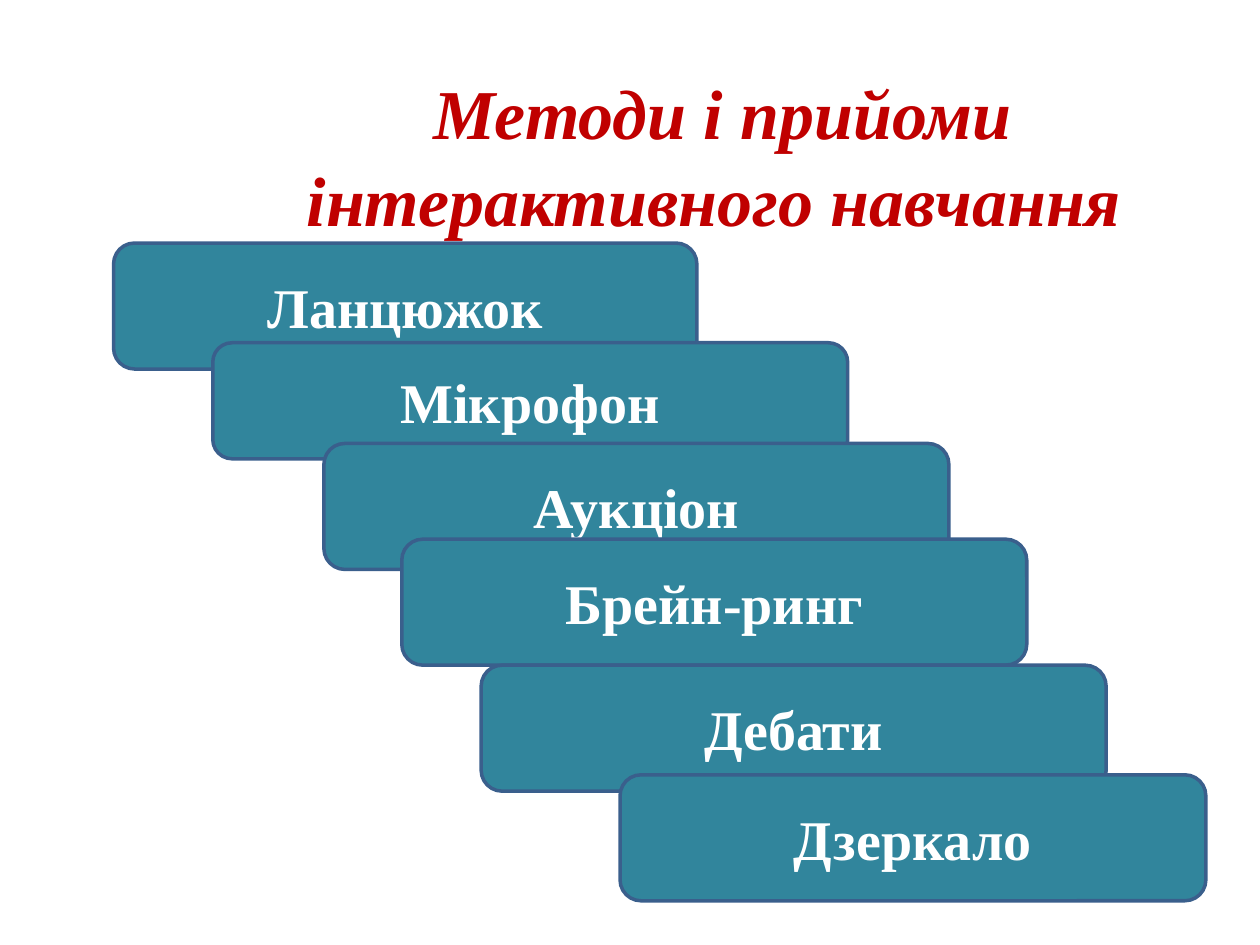
from dataclasses import dataclass

from pptx import Presentation
from pptx.dml.color import RGBColor as Rgb
from pptx.enum.shapes import MSO_SHAPE as Form
from pptx.enum.text import MSO_ANCHOR as Anchor, PP_ALIGN as Align
from pptx.shapes.autoshape import Shape
from pptx.slide import Slide
from pptx.text.text import TextFrame
from pptx.util import Cm, Pt


@dataclass(frozen=True)
class Theme:
    font: str = "Times New Roman"
    red: str = "C00000"
    teal: str = "31859C"
    edge: str = "3A5F8C"
    white: str = "FFFFFF"
    head: int = 40
    label: int = 32
    line: int = 2


@dataclass(frozen=True)
class Step:
    """One method on the stairs, lengths in centimetres."""
    text: str
    left: float
    top: float
    width: float = 12.6
    height: float = 2.54


THEME = Theme()
STEPS = [
    Step("Ланцюжок", 2.29, 4.9, width=11.76),
    Step("Мікрофон", 4.29, 6.91, width=12.8, height=2.34),
    Step("Аукціон", 6.53, 8.94),
    Step("Брейн-ринг", 8.1, 10.87),
    Step("Дебати", 9.7, 13.41),
    Step("Дзеркало", 12.5, 15.62, width=11.81),
]


def write(frame: TextFrame, text: str, *, size: int, color: str,
          italic: bool = False, space: float = 1.0) -> None:
    frame.word_wrap = True
    frame.vertical_anchor = Anchor.MIDDLE
    para = frame.paragraphs[0]
    para.alignment = Align.CENTER
    para.line_spacing = space
    run = para.add_run()
    run.text = text
    font = run.font
    font.name, font.size = THEME.font, Pt(size)
    font.bold, font.italic = True, italic
    font.color.rgb = Rgb.from_string(color)


def place(shape: Shape, left: float, top: float,
          width: float, height: float) -> None:
    shape.left, shape.top = Cm(left), Cm(top)
    shape.width, shape.height = Cm(width), Cm(height)


def draw(slide: Slide, step: Step) -> None:
    box = slide.shapes.add_shape(Form.ROUNDED_RECTANGLE, 0, 0, 0, 0)
    place(box, step.left, step.top, step.width, step.height)
    box.shadow.inherit = False
    box.fill.solid()
    box.fill.fore_color.rgb = Rgb.from_string(THEME.teal)
    box.line.color.rgb = Rgb.from_string(THEME.edge)
    box.line.width = Pt(THEME.line)
    write(box.text_frame, step.text, size=THEME.label, color=THEME.white)


def main() -> None:
    deck = Presentation()
    deck.slide_width, deck.slide_height = Cm(25.4), Cm(19.05)
    slide = deck.slides.add_slide(deck.slide_layouts[5])

    # Title
    title = slide.shapes.title
    place(title, 5.41, 0.91, 18.31, 4.37)
    write(title.text_frame, "Методи і прийоми інтерактивного навчання ",
          size=THEME.head, color=THEME.red, italic=True, space=1.04)

    # Stairs of methods, each overlapping the one before
    for step in STEPS:
        draw(slide, step)

    deck.save("out.pptx")


if __name__ == "__main__":
    main()
